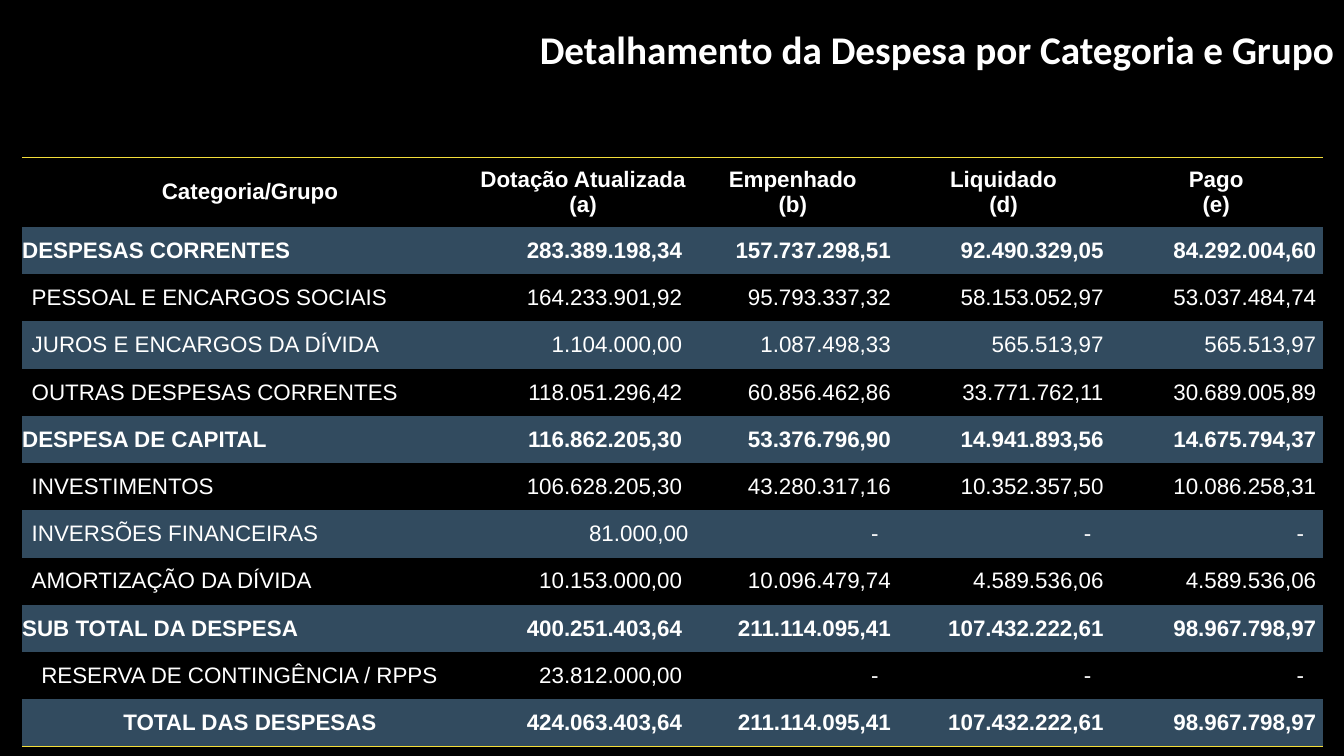
import pptx
import pptx.util
import pptx.dml.color
import pptx.enum.text
import pptx.oxml
import pptx.oxml.ns

Cm, Pt = pptx.util.Cm, pptx.util.Pt
ALIGN = pptx.enum.text.PP_ALIGN
ANCHOR = pptx.enum.text.MSO_ANCHOR
COLORS = {"bg": "000000", "band": "324B5F", "text": "FFFFFF", "rule": "F4DE3A"}
NO_STYLE = "{2D5ABB26-0587-4C30-8999-92F81FD0307C}"
COL_WIDTHS = [11.48, 5.31, 5.26, 5.36, 5.36]
HEADER_HEIGHT, ROW_HEIGHT = 1.76, 1.19
INDENT, NUMBER_GAP, DASH_GAP = 0.24, 0.16, 0.47

HEADERS = ["Categoria/Grupo", "Dotação Atualizada\n(a)", "Empenhado\n(b)",
           "Liquidado\n(d)", "Pago\n(e)"]
EXPENSES = [
    (0, "DESPESAS CORRENTES", "283.389.198,34", "157.737.298,51", "92.490.329,05", "84.292.004,60"),
    (1, "PESSOAL E ENCARGOS SOCIAIS", "164.233.901,92", "95.793.337,32", "58.153.052,97", "53.037.484,74"),
    (1, "JUROS E ENCARGOS DA DÍVIDA", "1.104.000,00", "1.087.498,33", "565.513,97", "565.513,97"),
    (1, "OUTRAS DESPESAS CORRENTES", "118.051.296,42", "60.856.462,86", "33.771.762,11", "30.689.005,89"),
    (0, "DESPESA DE CAPITAL", "116.862.205,30", "53.376.796,90", "14.941.893,56", "14.675.794,37"),
    (1, "INVESTIMENTOS", "106.628.205,30", "43.280.317,16", "10.352.357,50", "10.086.258,31"),
    (1, "INVERSÕES FINANCEIRAS", "81.000,00", "-", "-", "-"),
    (1, "AMORTIZAÇÃO DA DÍVIDA", "10.153.000,00", "10.096.479,74", "4.589.536,06", "4.589.536,06"),
    (0, "SUB TOTAL DA DESPESA", "400.251.403,64", "211.114.095,41", "107.432.222,61", "98.967.798,97"),
    (2, "RESERVA DE CONTINGÊNCIA / RPPS", "23.812.000,00", "-", "-", "-"),
    (0, "TOTAL DAS DESPESAS", "424.063.403,64", "211.114.095,41", "107.432.222,61", "98.967.798,97"),
]


def rgb(name):
    return pptx.dml.color.RGBColor.from_string(COLORS[name])


def write(tf, text, size=16, font="Arial", color="text", bold=False, align=ALIGN.LEFT):
    for i, line in enumerate(text.split("\n")):
        p = tf.add_paragraph() if i else tf.paragraphs[0]
        p.alignment = align
        r = p.add_run()
        r.text = line
        r.font.size, r.font.name, r.font.bold = Pt(size), font, bold
        r.font.color.rgb = rgb(color)


def add_rule(cell, side):
    ln = pptx.oxml.parse_xml(
        f'<a:{side} {pptx.oxml.ns.nsdecls("a")} w="12700"><a:solidFill>'
        f'<a:srgbClr val="{COLORS["rule"]}"/></a:solidFill></a:{side}>')
    cell._tc.get_or_add_tcPr().insert(0, ln)


def fill_cell(cell, text, left=0, right=0, band=False, **fmt):
    cell.margin_left, cell.margin_right = Cm(left), Cm(right)
    cell.margin_top = cell.margin_bottom = 0
    cell.vertical_anchor = ANCHOR.MIDDLE
    if band:
        cell.fill.solid()
        cell.fill.fore_color.rgb = rgb("band")
    else:
        cell.fill.background()
    write(cell.text_frame, text, **fmt)


def number_gap(value):
    if value == "-":
        return DASH_GAP
    return 0 if value == "81.000,00" else NUMBER_GAP


def add_expense_table(s):
    n = len(EXPENSES)
    frame = s.shapes.add_table(n + 1, len(HEADERS), Cm(0.56), Cm(3.96),
                               Cm(sum(COL_WIDTHS)), Cm(HEADER_HEIGHT + n * ROW_HEIGHT))
    table = frame.table
    table._tbl.tblPr.find(pptx.oxml.ns.qn("a:tableStyleId")).text = NO_STYLE
    table.horz_banding = False
    for col, width in zip(table.columns, COL_WIDTHS):
        col.width = Cm(width)
    for i, row in enumerate(table.rows):
        row.height = Cm(ROW_HEIGHT if i else HEADER_HEIGHT)

    for j, header in enumerate(HEADERS):
        fill_cell(table.cell(0, j), header, bold=True, align=ALIGN.CENTER)
        add_rule(table.cell(0, j), "lnT")
        add_rule(table.cell(n, j), "lnB")
    for i, (level, label, *values) in enumerate(EXPENSES, 1):
        fmt = {"band": i % 2 == 1, "bold": level == 0}
        fill_cell(table.cell(i, 0), label, left=level * INDENT,
                  align=ALIGN.CENTER if i == n else ALIGN.LEFT, **fmt)
        for j, value in enumerate(values, 1):
            fill_cell(table.cell(i, j), value, right=number_gap(value),
                      align=ALIGN.RIGHT, **fmt)


def add_title(s, text):
    sp = s.shapes.title
    sp.left, sp.top, sp.width, sp.height = Cm(12.47), Cm(0.51), Cm(21.4), Cm(1.45)
    tf = sp.text_frame
    tf.word_wrap = True
    tf.auto_size = pptx.enum.text.MSO_AUTO_SIZE.NONE
    tf.vertical_anchor = ANCHOR.TOP
    write(tf, text, size=28, font="Calibri", bold=True, align=ALIGN.RIGHT)


def main():
    prs = pptx.Presentation()
    prs.slide_width, prs.slide_height = Cm(33.87), Cm(19.05)
    s = prs.slides.add_slide(prs.slide_layouts[5])
    s.background.fill.solid()
    s.background.fill.fore_color.rgb = rgb("bg")
    add_expense_table(s)
    add_title(s, "Detalhamento da Despesa por Categoria e Grupo")
    prs.save("out.pptx")


if __name__ == "__main__":
    main()
